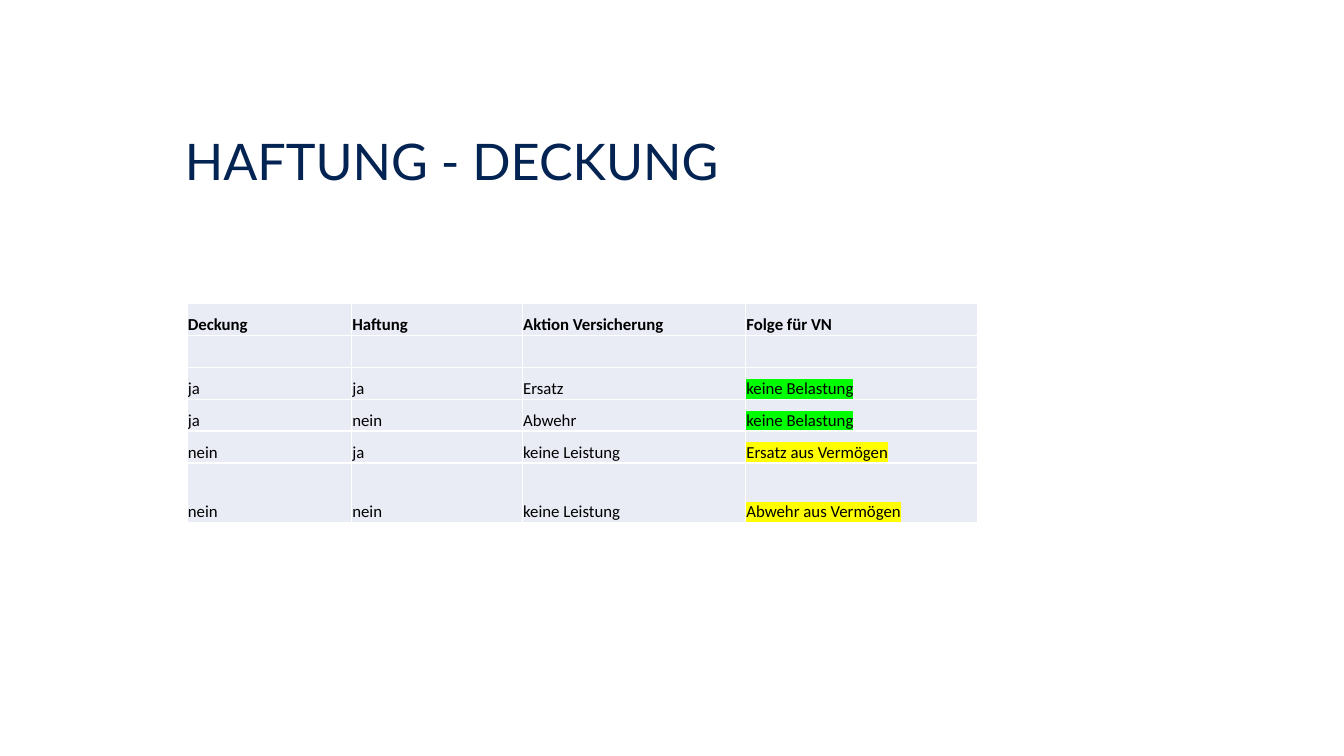
from lxml import etree
from pptx import Presentation
from pptx.dml import color
from pptx.enum import text
from pptx.oxml import ns
from pptx.util import Pt

GREEN, YELLOW = "00FF00", "FFFF00"
HIGHLIGHTS = {
    "keine Belastung": GREEN,
    "Ersatz aus Vermögen": YELLOW,
    "Abwehr aus Vermögen": YELLOW,
}
CASES = [
    ["Deckung", "Haftung", "Aktion Versicherung", "Folge für VN"],
    ["", "", "", ""],
    ["ja", "ja", "Ersatz", "keine Belastung"],
    ["ja", "nein", "Abwehr", "keine Belastung"],
    ["nein", "ja", "keine Leistung", "Ersatz aus Vermögen"],
    ["nein", "nein", "keine Leistung", "Abwehr aus Vermögen"],
]
COLUMN_WIDTHS = [117.5, 122, 159.5, 166]
ROW_HEIGHTS = [22.8] * 5 + [42.5]


def rgb(value):
    return color.RGBColor.from_string(value)


def format_run(run, font, size, colour, bold=False):
    run.font.name = font
    run.font.size = Pt(size)
    run.font.bold = bold
    run.font.color.rgb = rgb(colour)


def highlight(run, colour):
    mark = etree.Element(ns.qn("a:highlight"))
    etree.SubElement(mark, ns.qn("a:srgbClr"), val=colour)
    # The schema wants the highlight right after the text fill
    run.font._element.find(ns.qn("a:solidFill")).addnext(mark)


def add_borders(cell, colour, width):
    properties = cell._tc.get_or_add_tcPr()
    for side in ("lnL", "lnR", "lnT", "lnB"):
        line = etree.SubElement(properties, ns.qn(f"a:{side}"), w=str(Pt(width)))
        fill = etree.SubElement(line, ns.qn("a:solidFill"))
        etree.SubElement(fill, ns.qn("a:srgbClr"), val=colour)


def fill_cell(cell, wording, bold):
    add_borders(cell, "FFFFFF", 1)
    cell.fill.solid()
    cell.fill.fore_color.rgb = rgb("E9EBF5")
    cell.vertical_anchor = text.MSO_ANCHOR.BOTTOM
    cell.margin_left = cell.margin_right = cell.margin_top = Pt(0.7)
    cell.margin_bottom = Pt(0)
    cell.text_frame.text = wording
    for run in cell.text_frame.paragraphs[0].runs:
        format_run(run, "Calibri", 12, "000000", bold)
        if wording in HIGHLIGHTS:
            highlight(run, HIGHLIGHTS[wording])


def set_title(slide, wording):
    title = slide.shapes.title
    title.left, title.top, title.width, title.height = Pt(132), Pt(97), Pt(773), Pt(40)
    frame = title.text_frame
    frame.text = wording
    frame.margin_left = frame.margin_right = frame.margin_top = frame.margin_bottom = 0
    frame.vertical_anchor = text.MSO_ANCHOR.MIDDLE
    heading = frame.paragraphs[0]
    heading.alignment = text.PP_ALIGN.LEFT
    heading.line_spacing = 0.9
    format_run(heading.runs[0], "Lato", 36, "032352")


def add_case_table(slide, left, top):
    table = slide.shapes.add_table(
        len(CASES), len(COLUMN_WIDTHS), Pt(left), Pt(top),
        Pt(sum(COLUMN_WIDTHS)), Pt(sum(ROW_HEIGHTS))).table
    table.first_row = table.horz_banding = False
    for column, width in zip(table.columns, COLUMN_WIDTHS):
        column.width = Pt(width)
    for row, height, wordings in zip(table.rows, ROW_HEIGHTS, CASES):
        row.height = Pt(height)
        for cell, wording in zip(row.cells, wordings):
            fill_cell(cell, wording, bold=wordings is CASES[0])


def main():
    deck = Presentation()
    deck.slide_width, deck.slide_height = Pt(960), Pt(540)
    slide = deck.slides.add_slide(deck.slide_layouts[5])
    set_title(slide, "HAFTUNG - DECKUNG")
    add_case_table(slide, 133.5, 216.7)
    deck.save("out.pptx")


if __name__ == "__main__":
    main()
